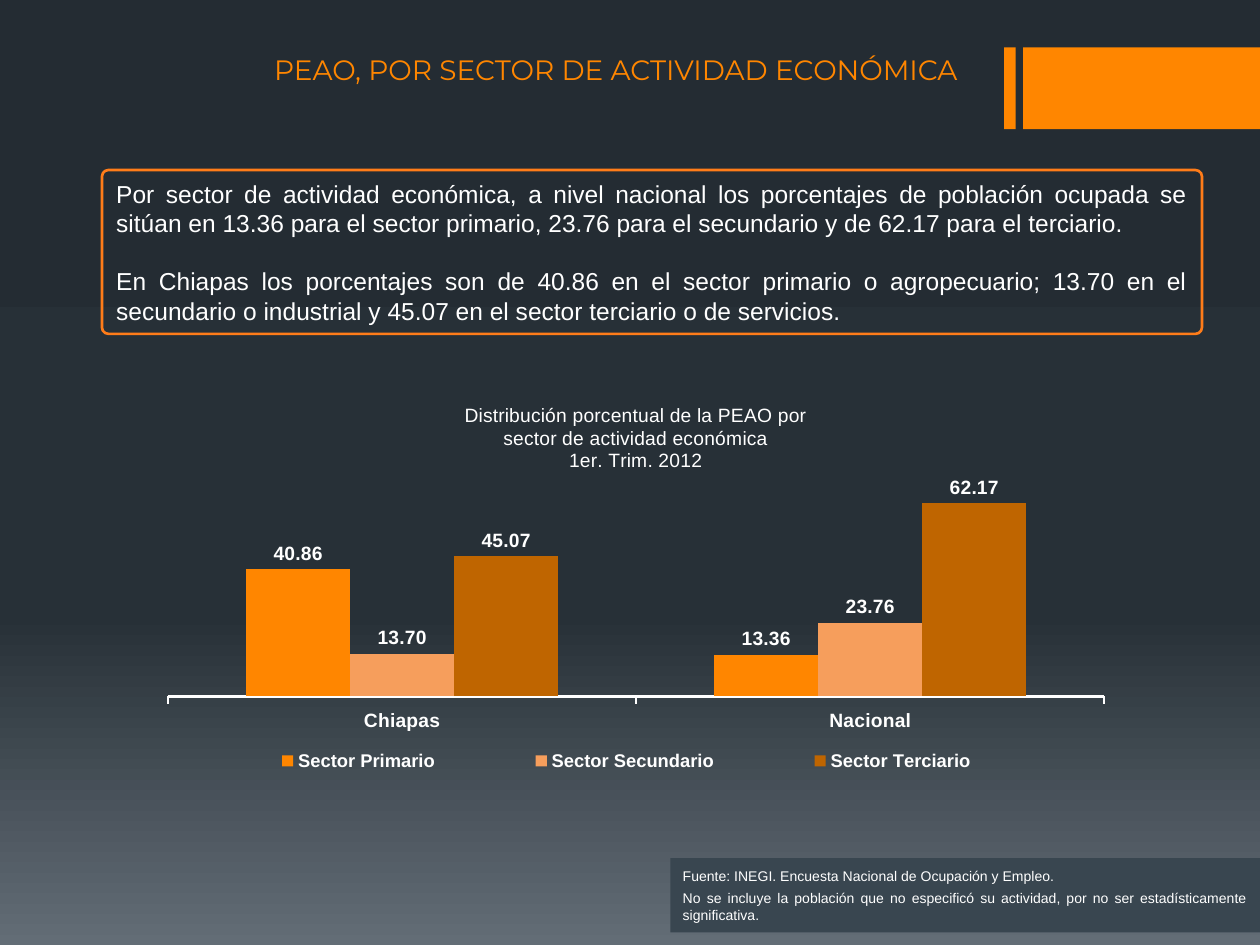
from copy import deepcopy
from lxml import etree
from pptx import Presentation
from pptx import util as u
from pptx.chart.data import CategoryChartData
from pptx.dml.color import RGBColor
from pptx.enum import chart as ch, shapes, text
from pptx.oxml.ns import qn

HUES = {
    "orange": "FF8600", "peach": "F69E5C", "brown": "BF6500",
    "edge": "FF7C19", "slate": "394650", "white": "FFFFFF",
    "night": "242C33", "dusk": "273037", "fog": "636D76",
}
COLS, ROWS = 100, 75


def hue(name):
    return RGBColor.from_string(HUES[name])


def place(item, **shares):
    """Fix a chart part at shares of the chart's size."""
    for old in item.findall(qn("c:layout")):
        item.remove(old)
    lay = etree.Element(qn("c:layout"))
    man = etree.SubElement(lay, qn("c:manualLayout"))
    if item.tag == qn("c:plotArea"):
        etree.SubElement(man, qn("c:layoutTarget")).set("val", "inner")
    for key in shares:
        if key in "xy":
            etree.SubElement(man, qn(f"c:{key}Mode")).set("val", "edge")
    for key, val in shares.items():
        etree.SubElement(man, qn(f"c:{key}")).set("val", str(val))
    # The layout follows the title text or the legend position
    lead = [n for n in item if n.tag in (qn("c:tx"), qn("c:legendPos"))]
    item.insert(len(lead), lay)


class Deck:
    font = "Arial"
    ink = "white"

    def __init__(self):
        self.prs = Presentation()
        self.prs.slide_width, self.prs.slide_height = u.Inches(10), u.Inches(7.5)
        self.slide = self.prs.slides.add_slide(self.prs.slide_layouts[5])

    def cells(self, x, y, w, h):
        dx, dy = self.prs.slide_width / COLS, self.prs.slide_height / ROWS
        return [round(v) for v in (x * dx, y * dy, w * dx, h * dy)]

    def style(self, font, size, bold=False, ink=None, face=None):
        font.name, font.size, font.bold = face or self.font, u.Pt(size), bold
        font.color.rgb = hue(ink or self.ink)

    def back(self, stops):
        fill = self.slide.background.fill
        fill.gradient()
        fill.gradient_angle = 270
        grad = self.slide.element.find(".//" + qn("a:gsLst"))
        while len(grad) < len(stops):
            grad.append(deepcopy(grad[-1]))
        for stop, (pos, name) in zip(fill.gradient_stops, stops):
            stop.position, stop.color.rgb = pos, hue(name)

    def title(self, words, box):
        head = self.slide.shapes.title
        head.left, head.top, head.width, head.height = self.cells(*box)
        frame = head.text_frame
        frame.text, frame.word_wrap = words, True
        frame.auto_size = text.MSO_AUTO_SIZE.NONE
        frame.vertical_anchor = text.MSO_ANCHOR.TOP
        para = frame.paragraphs[0]
        para.alignment = text.PP_ALIGN.CENTER
        self.style(para.font, 16, ink="orange", face="Montserrat")

    def box(self, box, fill=None, line=None, curve=None):
        kind = shapes.MSO_SHAPE.ROUNDED_RECTANGLE if curve else shapes.MSO_SHAPE.RECTANGLE
        item = self.slide.shapes.add_shape(kind, *self.cells(*box))
        item.shadow.inherit = False
        if curve:
            item.adjustments[0] = curve
        if fill:
            item.fill.solid()
            item.fill.fore_color.rgb = hue(fill)
        else:
            item.fill.background()
        if line:
            item.line.color.rgb, item.line.width = hue(line), u.Pt(1.5)
        else:
            item.line.fill.background()
        return item

    def label(self, item, lines, size, gap):
        frame = item.text_frame
        frame.word_wrap = True
        frame.vertical_anchor = text.MSO_ANCHOR.MIDDLE
        for i, line in enumerate(lines):
            para = frame.add_paragraph() if i else frame.paragraphs[0]
            para.text, para.alignment = line, text.PP_ALIGN.JUSTIFY
            if i:
                para.space_before = u.Pt(gap)
            self.style(para.font, size)

    def chart(self, box, head, cats, rows):
        data = CategoryChartData(number_format="0.00")
        data.categories = cats
        for name, _, vals in rows:
            data.add_series(name, vals)
        kind = ch.XL_CHART_TYPE.COLUMN_CLUSTERED
        chart = self.slide.shapes.add_chart(kind, *self.cells(*box), data).chart
        self.style(chart.font, 14)

        # Heading
        frame = chart.chart_title.text_frame
        for i, line in enumerate(head):
            para = frame.add_paragraph() if i else frame.paragraphs[0]
            para.text, para.alignment = line, text.PP_ALIGN.CENTER
            self.style(para.font, 11)
        chart.chart_title.include_in_layout = False
        place(chart.chart_title._element, x=0.32, y=0.05)

        # Axes
        val, cat = chart.value_axis, chart.category_axis
        val.visible = val.has_major_gridlines = False
        val.minimum_scale, val.maximum_scale = 0, 70
        cat.major_tick_mark = ch.XL_TICK_MARK.OUTSIDE
        cat.format.line.color.rgb, cat.format.line.width = hue("white"), u.Pt(1.25)
        self.style(cat.tick_labels.font, 11, True)

        # Columns
        plot = chart.plots[0]
        plot.gap_width, plot.overlap, plot.vary_by_categories = 150, 0, False
        for ser, (_, name, _) in zip(plot.series, rows):
            ser.format.fill.solid()
            ser.format.fill.fore_color.rgb = hue(name)
            tags = ser.data_labels
            tags.show_value, tags.number_format = True, "0.00"
            tags.number_format_is_linked = False
            tags.position = ch.XL_LABEL_POSITION.OUTSIDE_END
            self.style(tags.font, 11, True)
        place(chart.element.find(".//" + qn("c:plotArea")), x=0.02, y=0.25, w=0.96, h=0.54)

        # Legend
        chart.has_legend = True
        chart.legend.position = ch.XL_LEGEND_POSITION.BOTTOM
        chart.legend.include_in_layout = False
        self.style(chart.legend.font, 10.5, True)
        place(chart.legend._element, x=0.04, y=0.91, w=0.9, h=0.08)


def main():
    deck = Deck()
    deck.back([(0, "night"), (0.65, "dusk"), (1, "fog")])

    # Title and accent bars
    deck.title("PEAO, POR SECTOR DE ACTIVIDAD ECONÓMICA", (19.5, 3.7, 58.8, 6.4))
    for x, w in ((79.7, 0.9), (81.2, 18.8)):
        deck.box((x, 3.75, w, 6.5), "orange")

    # Summary
    note = deck.box((8.1, 13.5, 87.3, 13), line="edge", curve=0.039)
    deck.label(note, [
        "Por sector de actividad económica, a nivel nacional los porcentajes de población "
        "ocupada se sitúan en 13.36 para el sector primario, 23.76 para el secundario y de "
        "62.17 para el terciario.",
        "En Chiapas los porcentajes son de 40.86 en el sector primario o agropecuario; 13.70 "
        "en el secundario o industrial y 45.07 en el sector terciario o de servicios.",
    ], 14, 16.5)

    # Source
    foot = deck.box((53.2, 68.1, 46.8, 5.9), "slate")
    deck.label(foot, [
        "Fuente: INEGI. Encuesta Nacional de Ocupación y Empleo.",
        "No se incluye la población que no especificó su actividad, por no ser "
        "estadísticamente significativa.",
    ], 8, 3)

    # Shares by sector
    deck.chart(
        (11.8, 30, 77.4, 32),
        ["Distribución porcentual de la PEAO por", "sector de actividad económica",
         "1er. Trim. 2012"],
        ["Chiapas", "Nacional"],
        [("Sector Primario", "orange", (40.86, 13.36)),
         ("Sector Secundario", "peach", (13.7, 23.76)),
         ("Sector Terciario", "brown", (45.07, 62.17))])

    deck.prs.save("out.pptx")


if __name__ == "__main__":
    main()
